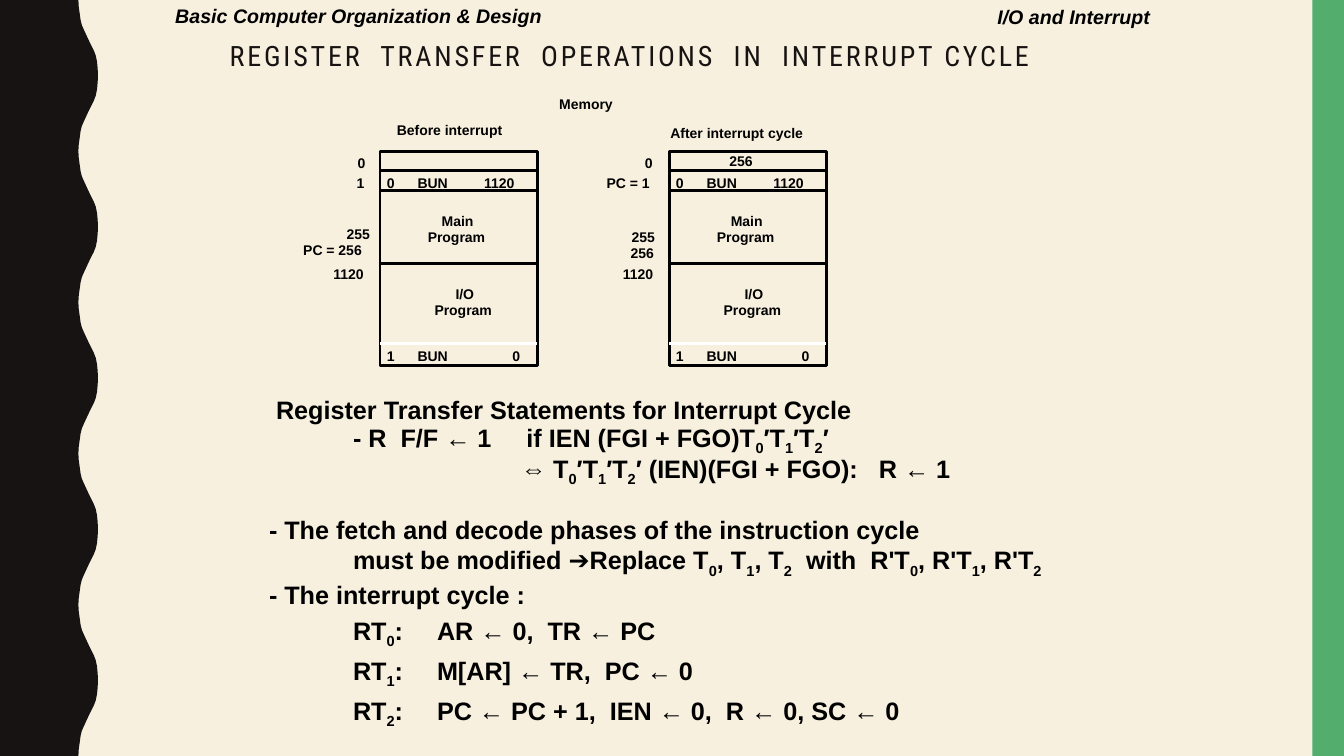
import pptx
import pptx.util
import pptx.dml.color
import pptx.enum.shapes
import pptx.enum.text
import pptx.oxml
import pptx.oxml.ns

Pt = pptx.util.Pt
SHAPES = pptx.enum.shapes.MSO_SHAPE
ALIGN = pptx.enum.text.PP_ALIGN


def color(value):
    return pptx.dml.color.RGBColor.from_string(value)


def write(text, left, top, width, height=19.4, size=10, font="Arial", ink="000000",
          bold=True, italic=False, inset=(7.2, 3.6), align=ALIGN.LEFT):
    box = slide.shapes.add_textbox(Pt(left), Pt(top), Pt(width), Pt(height))
    frame = box.text_frame
    frame.text = text
    frame.word_wrap = False
    frame.margin_left = frame.margin_right = Pt(inset[0])
    frame.margin_top = frame.margin_bottom = Pt(inset[1])
    for paragraph in frame.paragraphs:
        paragraph.alignment = align
        pieces = paragraph.text.split("_")
        parts = [(pieces[0], False)]
        for piece in pieces[1:]:
            parts += [(piece[0], True), (piece[1:], False)]
        paragraph.clear()
        for words, lowered in parts:
            if words:
                run = paragraph.add_run()
                run.text = words
                run.font.size = Pt(size)
                run.font.name = font
                run.font.bold = bold
                run.font.italic = italic
                run.font.color.rgb = color(ink)
                if lowered:
                    run.font._element.set("baseline", "-25000")
    return frame


deck = pptx.Presentation()
deck.slide_width = Pt(960)
deck.slide_height = Pt(540)
slide = deck.slides.add_slide(deck.slide_layouts[6])
slide.background.fill.solid()
slide.background.fill.fore_color.rgb = color("F7F0DF")

rise = [(56, 0), (56.3, 5), (57, 10), (57.6, 14.4), (58.5, 18), (59.8, 21), (61.2, 24),
        (62.6, 27), (64, 30), (65.5, 33), (67, 36), (68.4, 39.6), (69.3, 44), (69.8, 49), (70, 54)]
wave = rise + [(x, 108 - y) for x, y in reversed(rise[:-1])]
edge = [(x, y + 108 * period) for period in range(5) for x, y in wave]
outline = slide.shapes.build_freeform(0, 0)
outline.add_line_segments([(Pt(x), Pt(y)) for x, y in edge + [(0, 540)]], close=True)
wavy_border = outline.convert_to_shape()
green_band = slide.shapes.add_shape(SHAPES.RECTANGLE, Pt(937.5), 0, Pt(22.5), Pt(540))
for border, fill in ((wavy_border, "171312"), (green_band, "53AE6E")):
    border.shadow.inherit = False
    border.fill.solid()
    border.fill.fore_color.rgb = color(fill)
    border.line.fill.background()

title = write("REGISTER  TRANSFER  OPERATIONS  IN  INTERRUPT CYCLE", 157, 21, 659, 39.6,
              size=20, font="Roboto Condensed", ink="171312", bold=False)
title.word_wrap = True
title.vertical_anchor = pptx.enum.text.MSO_ANCHOR.MIDDLE
title.paragraphs[0].line_spacing = 0.9
title.paragraphs[0].runs[0].font._element.set("spc", "200")

statements = write("\n".join([
    " Register Transfer Statements for Interrupt Cycle",
    "\t- R  F/F ← 1     if IEN (FGI + FGO)T_0′T_1′T_2′",
    "\t  \t\t⇔ T_0′T_1′T_2′ (IEN)(FGI + FGO):   R ← 1",
    "- The fetch and decode phases of the instruction cycle",
    "   \tmust be modified ➔Replace T_0, T_1, T_2  with  R'T_0, R'T_1, R'T_2",
    "- The interrupt cycle :",
    "\tRT_0:\tAR ← 0,  TR ← PC",
    "\tRT_1:\tM[AR] ← TR,  PC ← 0",
    "\tRT_2:\tPC ← PC + 1,  IEN ← 0,  R ← 0, SC ← 0",
]), 187.2, 282.2, 576, 227, size=18, inset=(5, 2.5))
statements.word_wrap = True
spacings = [(0.85, 0), (0.85, 0), (0.96, 0), (1, 20), (1, 0), (1, 0), (1, 4), (1, 4), (1, 4)]
for statement, (line, before) in zip(statements.paragraphs, spacings):
    statement.line_spacing = line
    statement.space_before = Pt(before)
    tabs = pptx.oxml.parse_xml(
        "<a:tabLst %s>%s</a:tabLst>" % (
            pptx.oxml.ns.nsdecls("a"),
            "".join('<a:tab pos="%d" algn="l"/>' % Pt(60 * n) for n in (1, 2, 3))))
    statement._p.get_or_add_pPr().append(tabs)

cells = [
    ("0", -2.3, 121, 20), ("BUN", 19.7, 121, 36), ("1120", 67.3, 121, 37),
    ("Main", 36.9, 148.3, 37.4), ("Program", 27, 159.8, 55.4),
    ("I/O", 46.8, 200.2, 28), ("Program", 31.8, 211.7, 55.4),
    ("1", -2.3, 244.8, 20), ("BUN", 19.7, 244.8, 36), ("0", 87.5, 244.8, 20),
]
for memory_left in (271.5, 478):
    memory = slide.shapes.add_shape(SHAPES.RECTANGLE, Pt(memory_left), Pt(108), Pt(112.3), Pt(153))
    memory.shadow.inherit = False
    memory.fill.background()
    memory.line.color.rgb = color("000000")
    memory.line.width = Pt(2)
    for row_y, ink in ((121.7, "000000"), (136.1, "000000"), (188, "000000"), (245.3, "FFFFFF")):
        divider = slide.shapes.add_connector(
            pptx.enum.shapes.MSO_CONNECTOR.STRAIGHT,
            Pt(memory_left), Pt(row_y), Pt(memory_left + 112), Pt(row_y))
        divider.line.color.rgb = color(ink)
        divider.line.width = Pt(2)
        divider._element.spPr.append(
            pptx.oxml.parse_xml("<a:effectLst %s/>" % pptx.oxml.ns.nsdecls("a")))
    for text, offset, top, width in cells:
        write(text, memory_left + offset, top, width)

for text, left, top, width in [
    ("Memory", 392.4, 64.8, 53.3),
    (" Before interrupt", 273.6, 83.5, 93.6), (" After interrupt cycle", 469.4, 85.7, 113),
    ("0", 248.4, 106.6, 20), ("1", 247.7, 121, 20), ("255", 240.5, 157.7, 31),
    ("PC = 256", 209.5, 169.2, 56.9), ("1120", 231.1, 185.8, 36.7),
    ("0", 453.6, 106.6, 20), ("PC = 1", 426.2, 121, 45.4), ("255", 444.2, 159.8, 31),
    (" 256", 440.6, 171.4, 33.8), ("1120", 437.8, 185.8, 36.7), ("256", 514, 105.1, 31),
]:
    write(text, left, top, width)

write("I/O and Interrupt", 704.9, 0, 123.8, 23.8, size=14, italic=True, align=ALIGN.RIGHT)
write("Basic Computer Organization & Design", 120.2, 0, 273.6, 20.9, size=14, italic=True,
      inset=(5, 2.5))

deck.save("out.pptx")
